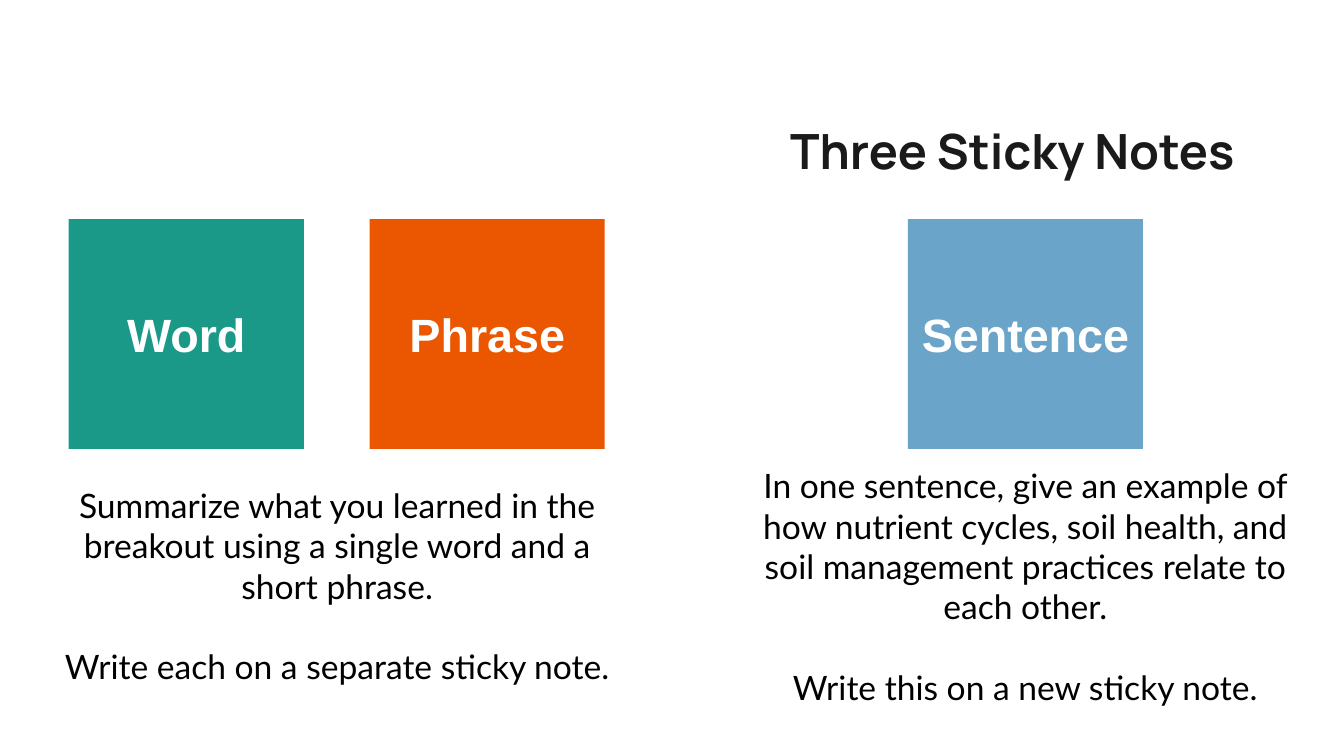
from pptx import Presentation
from pptx import util as u
from pptx.dml.color import RGBColor
from pptx.enum import shapes, text

TEAL = RGBColor(0x1A, 0x99, 0x88)
ORANGE = RGBColor(0xEB, 0x56, 0x00)
BLUE = RGBColor(0x6A, 0xA4, 0xC8)
WHITE = RGBColor(0xFF, 0xFF, 0xFF)
BLACK = RGBColor(0, 0, 0)
INK = RGBColor(0x1A, 0x1A, 0x1A)

NOTE_TOP, NOTE_W, NOTE_H = 117.4, 126, 123.1
BODY_W = 318.2
LINE_GAP = 21.6


def set_frame(tf, anchor):
    tf.word_wrap = True
    tf.vertical_anchor = anchor
    tf.margin_left = tf.margin_right = u.Pt(7.2)
    tf.margin_top = tf.margin_bottom = u.Pt(7.2)


def add_run(p, words, font, size, color, bold=False):
    r = p.add_run()
    r.text = words
    r.font.name = font
    r.font.size = u.Pt(size)
    r.font.bold = bold
    r.font.color.rgb = color


def add_title(s, words):
    sp = s.shapes.add_textbox(u.Pt(416.2), u.Pt(57.6), u.Pt(263.5), u.Pt(42.5))
    tf = sp.text_frame
    set_frame(tf, text.MSO_ANCHOR.TOP)
    add_run(tf.paragraphs[0], words, "Manrope", 26, INK, True)


def add_note(parent, left, words, color):
    sp = parent.shapes.add_shape(shapes.MSO_SHAPE.RECTANGLE, u.Pt(left),
                                 u.Pt(NOTE_TOP), u.Pt(NOTE_W), u.Pt(NOTE_H))
    sp.shadow.inherit = False
    sp.fill.solid()
    sp.fill.fore_color.rgb = color
    sp.line.fill.background()
    tf = sp.text_frame
    set_frame(tf, text.MSO_ANCHOR.MIDDLE)
    p = tf.paragraphs[0]
    p.alignment = text.PP_ALIGN.CENTER
    add_run(p, words, "Arial", 25, WHITE, True)


def add_body(s, left, top, height, task, reminder):
    sp = s.shapes.add_textbox(u.Pt(left), u.Pt(top), u.Pt(BODY_W), u.Pt(height))
    tf = sp.text_frame
    set_frame(tf, text.MSO_ANCHOR.MIDDLE)
    first, last = tf.paragraphs[0], tf.add_paragraph()
    last.space_before = u.Pt(LINE_GAP)
    for p, words in ((first, task), (last, reminder)):
        p.alignment = text.PP_ALIGN.CENTER
        add_run(p, words, "Lato", 18, BLACK)


def main():
    prs = Presentation()
    prs.slide_width, prs.slide_height = u.Pt(720), u.Pt(405)
    s = prs.slides.add_slide(prs.slide_layouts[6])
    add_title(s, "Three Sticky Notes")
    pair = s.shapes.add_group_shape()
    add_note(pair, 36.8, "Word", TEAL)
    add_note(pair, 198, "Phrase", ORANGE)
    add_note(s, 486.3, "Sentence", BLUE)
    add_body(s, 21.6, 253.8, 120,
             "Summarize what you learned in the breakout using a single word "
             "and a short phrase.",
             "Write each on a separate sticky note.")
    add_body(s, 390.2, 256.4, 115.2,
             "In one sentence, give an example of how nutrient cycles, soil "
             "health, and soil management practices relate to each other.",
             "Write this on a new sticky note.")
    prs.save("out.pptx")


if __name__ == "__main__":
    main()
